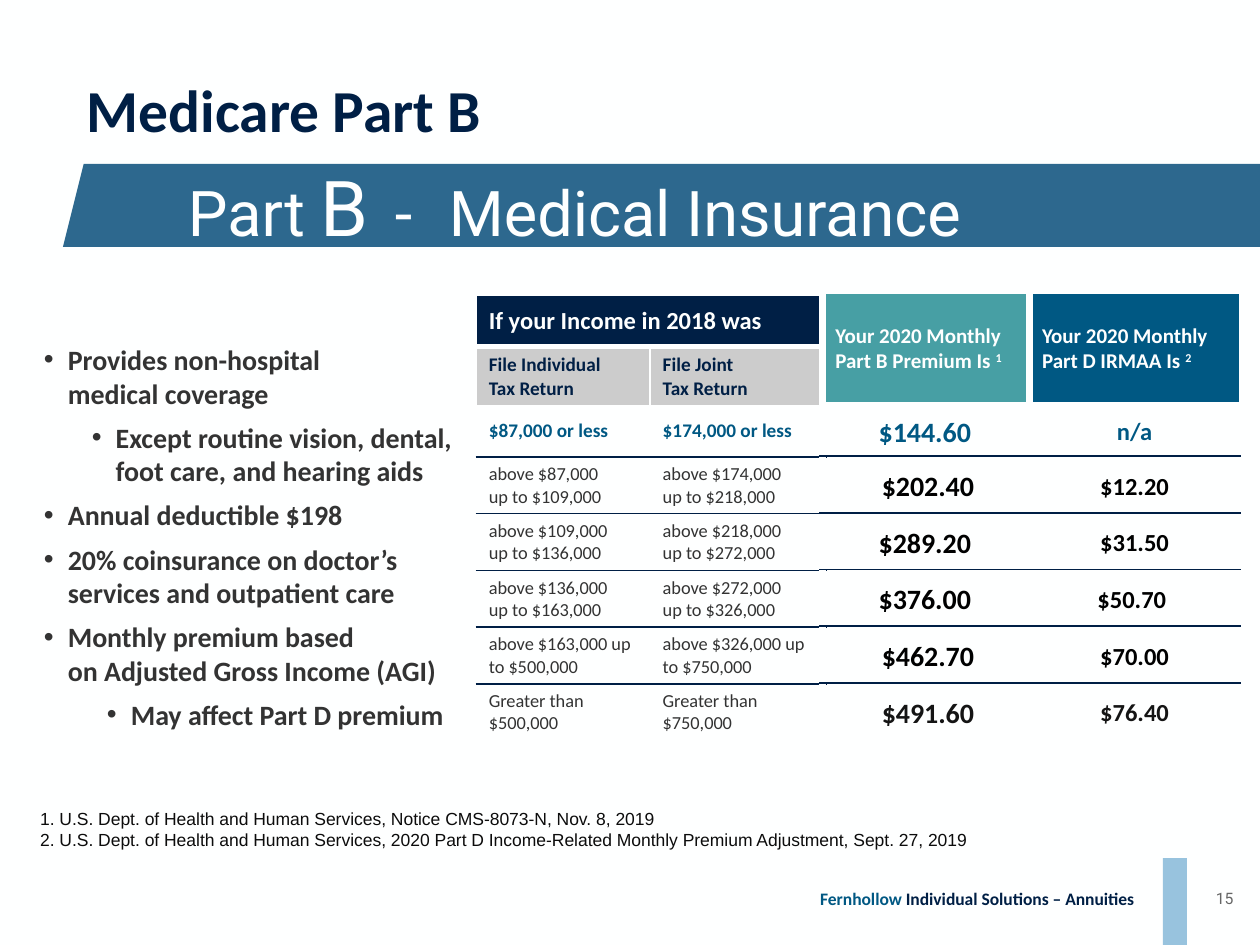
from dataclasses import dataclass
from lxml.etree import SubElement
from pptx import Presentation
from pptx.dml.color import RGBColor
from pptx.enum.shapes import MSO_SHAPE
from pptx.enum.text import MSO_ANCHOR, PP_ALIGN
from pptx.oxml.ns import qn
from pptx.util import Inches, Pt


@dataclass(frozen=True)
class Theme:
    paper: str = "FEFFFF"
    navy: str = "001F45"
    blue: str = "005883"
    band: str = "2D688E"
    teal: str = "479FA4"
    sky: str = "98C3DE"
    silver: str = "CCCCCC"
    gray: str = "333333"
    number: str = "666666"
    black: str = "000000"
    soft_black: str = "141414"
    note: str = "0C0C0C"
    body: str = "Calibri"
    display: str = "Roboto"
    plain: str = "Arial"
    title_size: float = 34
    band_size: float = 36
    letter_size: float = 44
    text_size: float = 16
    head_size: float = 14
    label_size: float = 12
    bracket_size: float = 11
    range_size: float = 10.5
    small_size: float = 10
    number_size: float = 9


THEME = Theme()
COLUMNS, ROWS, UNIT = 40, 30, 0.25


def grid(*counts):
    return [Inches(count * UNIT) for count in counts]


def write(para, text, font=THEME.body, size=THEME.text_size, color=THEME.navy,
          bold=False, raised=False, spacing=0):
    for index, line in enumerate(text.split("\n")):
        if index:
            para.add_line_break()
        span = para.add_run()
        span.text = line
        span.font.name = font
        span.font.size = Pt(size)
        span.font.bold = bold
        span.font.color.rgb = RGBColor.from_string(color)
        if raised:
            span.font._element.set("baseline", "30000")
        if spacing:
            span.font._element.set("spc", str(spacing * 100))


def add_box(slide, place, middle=False, inset=True):
    frame = slide.shapes.add_textbox(*grid(*place)).text_frame
    frame.word_wrap = True
    if middle:
        frame.vertical_anchor = MSO_ANCHOR.MIDDLE
    if not inset:
        clear_insets(frame)
    return frame


def clear_insets(frame):
    frame.margin_left = frame.margin_right = frame.margin_top = frame.margin_bottom = 0


def add_block(slide, kind, place, color):
    shape = slide.shapes.add_shape(kind, *grid(*place))
    shape.shadow.inherit = False
    shape.fill.solid()
    shape.fill.fore_color.rgb = RGBColor.from_string(color)
    shape.line.fill.background()
    return shape


def add_title(slide, text):
    title = slide.shapes.title
    title.left, title.top, title.width, title.height = grid(2.76, 2.32, 36, 2.28)
    frame = title.text_frame
    frame.vertical_anchor = MSO_ANCHOR.MIDDLE
    clear_insets(frame)
    para = frame.paragraphs[0]
    para.alignment = PP_ALIGN.LEFT
    write(para, text, size=THEME.title_size, bold=True)


def add_bullets(slide, place, items):
    frame = add_box(slide, place)
    for index, (level, margin, text) in enumerate(items):
        para = frame.add_paragraph() if index else frame.paragraphs[0]
        para.level = level
        para.space_before = Pt(6)
        write(para, text, color=THEME.gray, bold=True)
        properties = para._p.get_or_add_pPr()
        properties.set("marL", str(Inches(margin)))
        properties.set("indent", str(-Inches(0.19)))
        color = SubElement(properties, qn("a:buClr"))
        SubElement(color, qn("a:srgbClr"), val=THEME.gray)
        SubElement(properties, qn("a:buFont"), typeface=THEME.plain)
        SubElement(properties, qn("a:buChar"), char="•")


def draw_border(cell, side, color, width):
    line = SubElement(cell._tc.get_or_add_tcPr(), qn(f"a:ln{side}"), w=str(Pt(width)))
    fill = SubElement(line, qn("a:solidFill"))
    SubElement(fill, qn("a:srgbClr"), val=color)


def add_grid(slide, corner, widths, heights, header_rows, left_line, right_line):
    place = grid(*corner, sum(widths), sum(heights))
    table = slide.shapes.add_table(len(heights), len(widths), *place).table
    table.first_row = table.horz_banding = False
    for column, width in zip(table.columns, grid(*widths)):
        column.width = width
    for row, height in zip(table.rows, grid(*heights)):
        row.height = height
    last_row, last_column = len(heights) - 1, len(widths) - 1
    for row in range(len(heights)):
        top = (THEME.navy, 1) if row > header_rows else (THEME.paper, 3 if row == 1 else 1)
        bottom = (THEME.navy, 1) if header_rows <= row < last_row else (THEME.paper, 1 if row else 3)
        for column in range(len(widths)):
            cell = table.cell(row, column)
            cell.vertical_anchor = MSO_ANCHOR.MIDDLE
            draw_border(cell, "L", THEME.paper, 1 if column else left_line)
            draw_border(cell, "R", THEME.paper, right_line if column == last_column else 1)
            draw_border(cell, "T", *top)
            draw_border(cell, "B", *bottom)
            cell.fill.background()
    return table


def fill_cell(cell, text, fill=None, centered=False, **style):
    if fill:
        cell.fill.solid()
        cell.fill.fore_color.rgb = RGBColor.from_string(fill)
    para = cell.text_frame.paragraphs[0]
    if centered:
        para.alignment = PP_ALIGN.CENTER
        para.line_spacing = 1.15
    write(para, text, **style)


def add_income_table(slide, heading, pairs):
    table = add_grid(slide, (15.12, 9.36), [5.52] * 2, [1.64] * (len(pairs) + 1), 2, 1, 4.5)
    table.cell(0, 0).merge(table.cell(0, 1))
    fill_cell(table.cell(0, 0), heading, THEME.navy, size=THEME.head_size,
              color=THEME.paper, bold=True)
    special = [
        dict(fill=THEME.silver, size=THEME.bracket_size, bold=True),
        dict(color=THEME.blue, size=THEME.bracket_size, bold=True),
    ]
    regular = dict(color=THEME.gray, size=THEME.range_size)
    for row, pair in enumerate(pairs):
        style = special[row] if row < len(special) else regular
        for column, text in enumerate(pair):
            fill_cell(table.cell(row + 1, column), text, **style)


def add_price_table(slide, left, heading, mark, fill, size, right_line, prices):
    heights = [3.52, 1.64] + [1.8] * (len(prices) - 1)
    table = add_grid(slide, (left, 9.32), [6.68], heights, 1, 4.5, right_line)
    label = dict(size=THEME.label_size, color=THEME.paper, bold=True)
    fill_cell(table.cell(0, 0), heading, fill, **label)
    write(table.cell(0, 0).text_frame.paragraphs[0], mark, raised=True, **label)
    colors = [THEME.blue] + [THEME.black] * (len(prices) - 2) + [THEME.soft_black]
    for row, (price, color) in enumerate(zip(prices, colors), 1):
        fill_cell(table.cell(row, 0), price, centered=True, size=size, color=color, bold=True)


def add_band(slide):
    band = add_block(slide, MSO_SHAPE.PARALLELOGRAM, (2, 5.2, 39.6, 2.64), THEME.band)
    band.text_frame.vertical_anchor = MSO_ANCHOR.MIDDLE
    para = band.text_frame.paragraphs[0]
    para.alignment = PP_ALIGN.LEFT
    style = dict(font=THEME.display, color=THEME.paper)
    write(para, "Part ", size=THEME.band_size, **style)
    write(para, "B", size=THEME.letter_size, **style)
    write(para, " - ", size=THEME.band_size, spacing=6, **style)
    write(para, "Medical Insurance", size=THEME.band_size, **style)


def add_footer(slide):
    add_block(slide, MSO_SHAPE.RECTANGLE, (36.92, 27.24, 0.76, 2.76), THEME.sky)
    owner = add_box(slide, (25.24, 27.04, 10.76, 2.96), True, False).paragraphs[0]
    owner.alignment = PP_ALIGN.RIGHT
    write(owner, "Fernhollow", size=THEME.small_size, color=THEME.blue, bold=True)
    write(owner, " Individual Solutions – Annuities", size=THEME.small_size, bold=True)
    number = add_box(slide, (37.76, 27.04, 2.24, 2.96), True, False).paragraphs[0]
    number.alignment = PP_ALIGN.CENTER
    write(number, "15", font=THEME.display, size=THEME.number_size, color=THEME.number)


def add_notes(slide, lines):
    frame = add_box(slide, (0.88, 25.44, 38.32, 1.76))
    for index, line in enumerate(lines):
        para = frame.add_paragraph() if index else frame.paragraphs[0]
        write(para, line, font=THEME.plain, size=THEME.small_size, color=THEME.note)


def main():
    deck = Presentation()
    deck.slide_width, deck.slide_height = grid(COLUMNS, ROWS)
    page = deck.slides.add_slide(deck.slide_layouts[5])
    page.background.fill.solid()
    page.background.fill.fore_color.rgb = RGBColor.from_string(THEME.paper)
    add_footer(page)
    add_title(page, "Medicare Part B")
    add_bullets(page, (1, 10.68, 15, 12.84), [
        (0, 0.19, "Provides non-hospital\nmedical coverage"),
        (1, 0.57, "Except routine vision, dental,\nfoot care, and hearing aids"),
        (0, 0.19, "Annual deductible $198"),
        (0, 0.19, "20% coinsurance on doctor’s services and outpatient care"),
        (0, 0.19, "Monthly premium based\non Adjusted Gross Income (AGI)"),
        (1, 0.69, "May affect Part D premium"),
    ])
    add_income_table(page, "If your Income in 2018 was", [
        ("File Individual\nTax Return", "File Joint\nTax Return"),
        ("$87,000 or less", "$174,000 or less"),
        ("above $87,000\nup to $109,000", "above $174,000\nup to $218,000"),
        ("above $109,000\nup to $136,000", "above $218,000\nup to $272,000"),
        ("above $136,000\nup to $163,000", "above $272,000\nup to $326,000"),
        ("above $163,000 up to $500,000", "above $326,000 up to $750,000"),
        ("Greater than $500,000", "Greater than $750,000"),
    ])
    add_band(page)
    add_price_table(page, 26.12, "Your 2020 Monthly\nPart B Premium Is ", "1", THEME.teal,
                    THEME.text_size, 4.5,
                    ["$144.60 ", "$202.40", "$289.20 ", "$376.00 ", "$462.70", "$491.60"])
    add_notes(page, [
        "1. U.S. Dept. of Health and Human Services, Notice CMS-8073-N, Nov. 8, 2019",
        "2. U.S. Dept. of Health and Human Services, 2020 Part D Income-Related Monthly "
        "Premium Adjustment, Sept. 27, 2019",
    ])
    add_price_table(page, 32.68, "Your 2020 Monthly Part D IRMAA Is ", "2", THEME.blue,
                    THEME.head_size, 1,
                    ["n/a", "$12.20", "$31.50", "$50.70 ", "$70.00", "$76.40"])
    deck.save("out.pptx")


if __name__ == "__main__":
    main()
